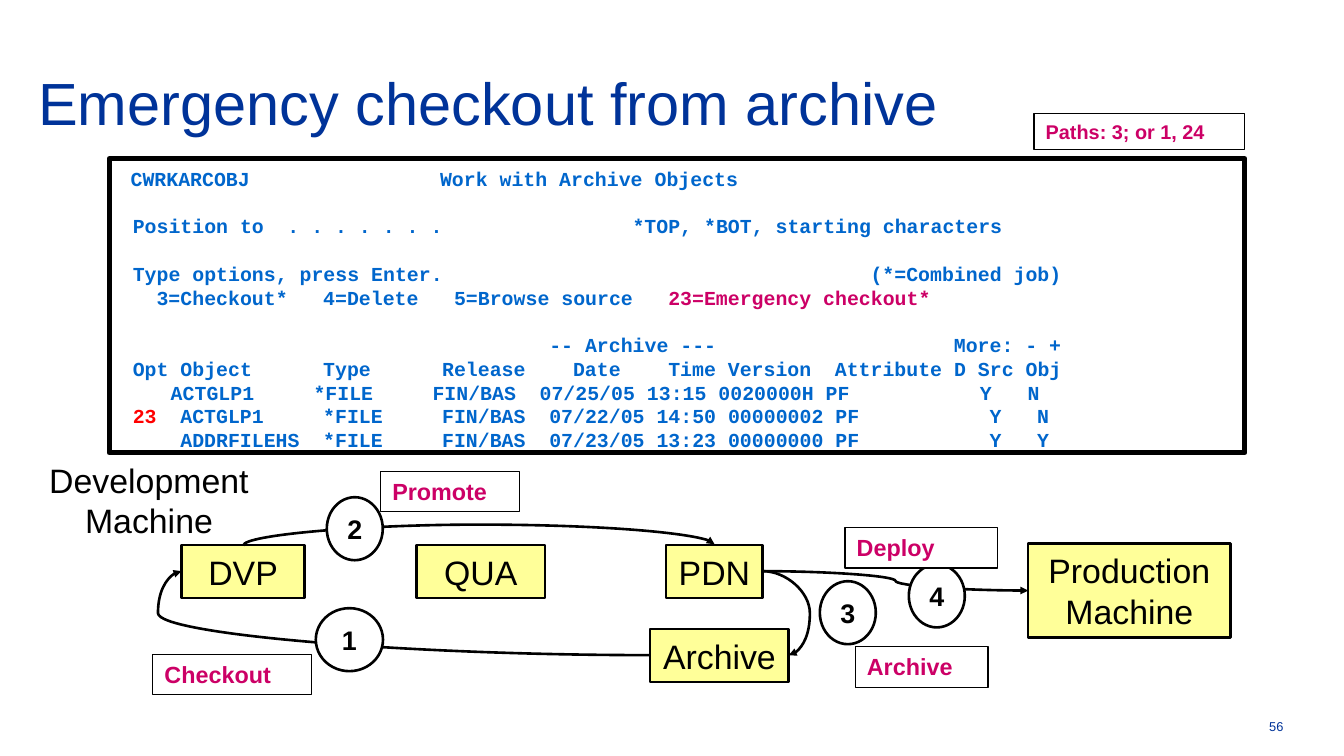
import pptx
import pptx.dml.color
import pptx.enum.shapes
import pptx.enum.text
import pptx.oxml
import pptx.oxml.ns
import pptx.util

Pt = pptx.util.Pt
SHAPE = pptx.enum.shapes.MSO_SHAPE
ALIGN = pptx.enum.text.PP_ALIGN
ANCHOR = pptx.enum.text.MSO_ANCHOR

COLORS = {
    "title": "003399",
    "screen": "0066CC",
    "accent": "CC0066",
    "alert": "FF0000",
    "machine": "FFFF99",
    "white": "FFFFFF",
    "black": "000000",
}
SCREEN_SIZE = 17
COLUMN_WIDTH = 10.2
LINE_HEIGHT = 20.4
HIGHLIGHTS = {"23=Emergency checkout*": "accent", "23": "alert"}
SCREEN_ROWS = [
    (0.82, "CWRKARCOBJ                Work with Archive Objects"),
    (1, ""),
    (1, "Position to  . . . . . . .                *TOP, *BOT, starting characters"),
    (1, ""),
    (1, "Type options, press Enter.                                    (*=Combined job)"),
    (1, "  3=Checkout*   4=Delete   5=Browse source   23=Emergency checkout*"),
    (1, ""),
    (1, "                                   -- Archive ---                    More: - +"),
    (1, "Opt Object      Type      Release    Date    Time Version  Attribute D Src Obj"),
    (0.19, "    ACTGLP1     *FILE     FIN/BAS  07/25/05 13:15 0020000H PF           Y   N"),
    (1, "23  ACTGLP1     *FILE     FIN/BAS  07/22/05 14:50 00000002 PF           Y   N"),
    (1, "    ADDRFILEHS  *FILE     FIN/BAS  07/23/05 13:23 00000000 PF           Y   Y"),
]
MACHINES = [
    ("Production\nMachine", 881.3, 465.8, 173.5, 80.6),
    ("DVP", 155.5, 467.3, 105.8, 45.4),
    ("PDN", 571, 467.3, 82.8, 45.4),
    ("QUA", 357.1, 467.3, 110.2, 45.4),
    ("Archive", 557.3, 539.3, 118.8, 45.4),
]
STEPS = [
    ("1", 270.7, 521.3, 57.6),
    ("2", 280.1, 426.2, 48),
    ("4", 779, 483.8, 48),
    ("3", 702.7, 498.2, 48),
]
LABELS = [
    ("Checkout", 131, 560.9, 136.1, 34.6, 20),
    ("Paths: 3; or 1, 24", 886.3, 97.2, 180.7, 31, 17),
    ("Promote", 326.2, 403.9, 118.8, 34.6, 20),
    ("Archive", 733, 554.4, 113.8, 34.6, 20),
    ("Deploy", 724.3, 452.2, 131, 34.6, 20),
]
FLOWS = [
    (411, 669, 410, 265.1, 18, 90),
    (653.8, 489.6, 881.3, 506.2, 0.5, 0),
    (653.8, 489.6, 676.1, 561.6, 1.81, 0),
    (557.3, 561.6, 155.5, 489.6, 1.05, 0),
]


def color(name):
    return pptx.dml.color.RGBColor.from_string(COLORS[name])


def set_font(span, size, ink, bold=False, face="Arial"):
    span.font.name = face
    span.font.size = Pt(size)
    span.font.bold = bold
    span.font.color.rgb = color(ink)


def write(box, text, size=29, ink="black", bold=False, align=ALIGN.CENTER,
          anchor=ANCHOR.MIDDLE, inset=10):
    frame = box.text_frame
    frame.word_wrap = True
    frame.auto_size = pptx.enum.text.MSO_AUTO_SIZE.NONE
    frame.vertical_anchor = anchor
    frame.margin_left = frame.margin_right = Pt(inset)
    frame.margin_top = frame.margin_bottom = Pt(5)
    for number, line in enumerate(text.split("\n")):
        para = frame.paragraphs[0] if number == 0 else frame.add_paragraph()
        para.alignment = align
        span = para.add_run()
        span.text = line
        set_font(span, size, ink, bold)


def add_box(page, kind, left, top, width, height, fill="white", line=2.25):
    box = page.shapes.add_shape(kind, Pt(left), Pt(top), Pt(width), Pt(height))
    box.shadow.inherit = False
    box.fill.solid()
    box.fill.fore_color.rgb = color(fill)
    box.line.color.rgb = color("black")
    box.line.width = Pt(line)
    return box


def add_text(page, text, left, top, width, height, **style):
    box = page.shapes.add_textbox(Pt(left), Pt(top), Pt(width), Pt(height))
    write(box, text, **style)


def add_flow(page, start_x, start_y, end_x, end_y, bend, turn):
    flow = page.shapes.add_connector(
        pptx.enum.shapes.MSO_CONNECTOR.CURVE,
        Pt(start_x), Pt(start_y), Pt(end_x), Pt(end_y))
    flow.line.color.rgb = color("black")
    flow.line.width = Pt(2.25)
    properties = flow._element.spPr
    if turn:
        properties.find(pptx.oxml.ns.qn("a:xfrm")).set("rot", str(turn * 60000))
    adjustments = properties.find(".//" + pptx.oxml.ns.qn("a:avLst"))
    guide = pptx.oxml.parse_xml(
        f'<a:gd {pptx.oxml.ns.nsdecls("a")} name="adj1" fmla="val {round(bend * 100000)}"/>')
    adjustments.append(guide)
    outline = properties.find(pptx.oxml.ns.qn("a:ln"))
    outline.append(pptx.oxml.parse_xml(
        f'<a:tailEnd {pptx.oxml.ns.nsdecls("a")} type="triangle"/>'))
    properties.append(pptx.oxml.parse_xml(
        f'<a:effectLst {pptx.oxml.ns.nsdecls("a")}/>'))


def split_columns(row):
    column = 0
    for part in row.split("  "):
        text = part.strip()
        if text:
            yield column + len(part) - len(part.lstrip()), text
        column += len(part) + 2


def add_tabs(para, positions):
    stops = "".join(f'<a:tab pos="{Pt(position)}" algn="l"/>' for position in positions)
    para._p.get_or_add_pPr().append(pptx.oxml.parse_xml(
        f'<a:tabLst {pptx.oxml.ns.nsdecls("a")}>{stops}</a:tabLst>'))


def add_screen(page):
    box = add_box(page, SHAPE.RECTANGLE, 93.6, 136.1, 973.4, 252, line=4.5)
    frame = box.text_frame
    frame.word_wrap = True
    frame.vertical_anchor = ANCHOR.TOP
    frame.margin_left = frame.margin_right = Pt(10)
    frame.margin_top = Pt(6.5)
    frame.margin_bottom = Pt(0)
    para = frame.paragraphs[0]
    gap = 0
    for number, (offset, row) in enumerate(SCREEN_ROWS):
        if not row:
            gap += LINE_HEIGHT
            continue
        if number:
            para = frame.add_paragraph()
        pieces = list(split_columns(row))
        add_tabs(para, [(offset + column) * COLUMN_WIDTH for column, text in pieces])
        para.alignment = ALIGN.LEFT
        para.line_spacing = Pt(LINE_HEIGHT)
        para.space_before = Pt(gap)
        gap = 0
        for column, text in pieces:
            span = para.add_run()
            span.text = "\t" + text
            set_font(span, SCREEN_SIZE, HIGHLIGHTS.get(text, "screen"), True, "Courier New")


def add_title(page, text):
    title = page.shapes.title
    title.left, title.top, title.width, title.height = Pt(28.8), Pt(42.5), Pt(1000.8), Pt(89.3)
    write(title, text, size=51, ink="title", align=ALIGN.LEFT, inset=4)


def main():
    deck = pptx.Presentation()
    deck.slide_width, deck.slide_height = Pt(1152), Pt(648)
    page = deck.slides.add_slide(deck.slide_layouts[5])
    add_title(page, "Emergency checkout from archive")
    add_text(page, "56", 1063.4, 611.3, 46.8, 22.3, size=11, ink="title",
             align=ALIGN.RIGHT, anchor=ANCHOR.TOP)
    for text, *place in MACHINES:
        write(add_box(page, SHAPE.RECTANGLE, *place, fill="machine"), text)
    for flow in FLOWS:
        add_flow(page, *flow)
    for text, left, top, width in STEPS:
        write(add_box(page, SHAPE.OVAL, left, top, width, 54), text, size=23, bold=True)
    add_text(page, "Development\nMachine", 20.9, 388.1, 213.8, 80.6)
    add_screen(page)
    for text, *place, size in LABELS:
        write(add_box(page, SHAPE.RECTANGLE, *place, line=1), text, size=size,
              ink="accent", bold=True, align=ALIGN.LEFT, anchor=ANCHOR.TOP)
    deck.save("out.pptx")


if __name__ == "__main__":
    main()
